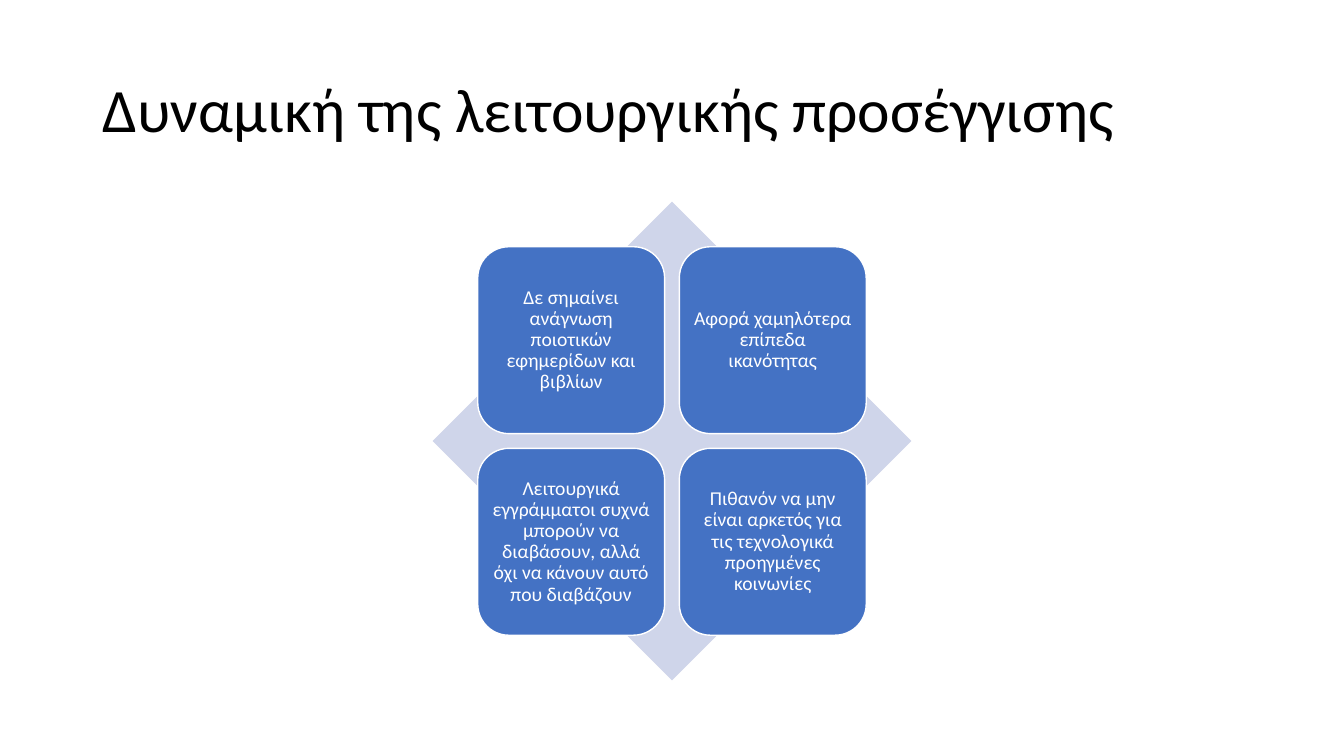
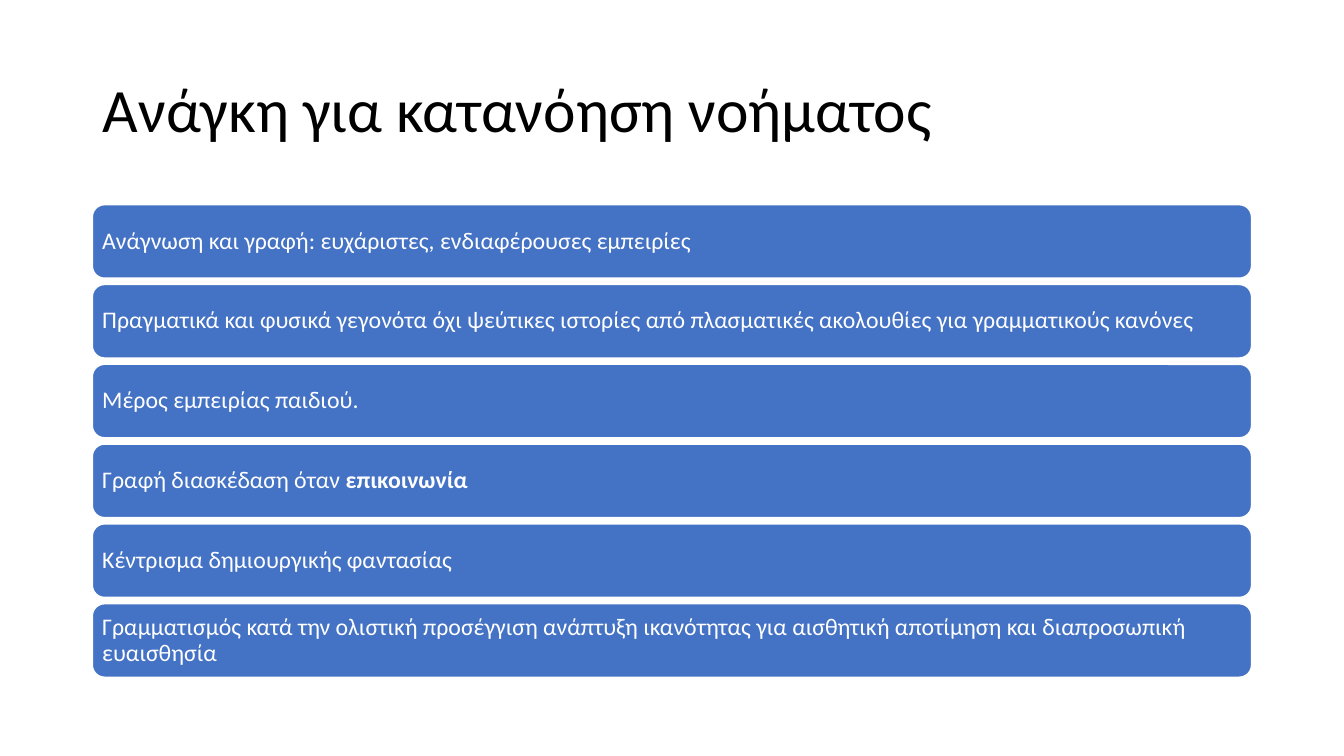
"""Build two slides on functional literacy: a four-box diamond and a stack of bars."""
from dataclasses import dataclass

from pptx import Presentation
from pptx.dml.color import RGBColor
from pptx.enum.shapes import MSO_SHAPE
from pptx.enum.text import MSO_ANCHOR, PP_ALIGN
from pptx.shapes.autoshape import Shape
from pptx.slide import Slide
from pptx.util import Emu, Pt


@dataclass(frozen=True)
class Theme:
    """Colours, font and type sizes that both slides share."""
    font: str = "Calibri"
    ink: RGBColor = RGBColor(0x00, 0x00, 0x00)
    white: RGBColor = RGBColor(0xFF, 0xFF, 0xFF)
    blue: RGBColor = RGBColor(0x44, 0x72, 0xC4)
    pale: RGBColor = RGBColor(0xCF, 0xD5, 0xEA)
    head: int = 44
    bar: int = 17
    card: int = 14
    edge: int = 1
    lead: float = 0.9


@dataclass(frozen=True)
class Rect:
    """A place on the slide in px."""
    left: int
    top: int
    width: int
    height: int

    def emu(self) -> tuple[Emu, Emu, Emu, Emu]:
        """Return the four lengths in EMU."""
        return px(self.left), px(self.top), px(self.width), px(self.height)


@dataclass(frozen=True)
class Style:
    """How the text of one kind of element is set."""
    size: int
    color: RGBColor
    align: PP_ALIGN
    side: int
    rim: int


@dataclass(frozen=True)
class Label:
    """A text with an optional bold ending."""
    text: str
    bold: str = ""


THEME = Theme()
SCALE = 9525
PAGE = Rect(0, 0, 1280, 720)
TITLE = Rect(88, 38, 1104, 139)
HEAD = Style(THEME.head, THEME.ink, PP_ALIGN.LEFT, 10, 5)
CARD = Style(THEME.card, THEME.white, PP_ALIGN.CENTER, 5, 5)
BAR = Style(THEME.bar, THEME.white, PP_ALIGN.LEFT, 6, 6)

DIAMOND = Rect(412, 192, 456, 456)
CARD_SIZE, CARD_STEP = 178, 192
FIRST_BAR = Rect(88, 195, 1104, 70)
BAR_STEP = 76

CARDS = (
    Label("Δε σημαίνει ανάγνωση ποιοτικών εφημερίδων και βιβλίων"),
    Label("Αφορά χαμηλότερα επίπεδα ικανότητας"),
    Label("Λειτουργικά εγγράμματοι συχνά μπορούν να διαβάσουν, "
          "αλλά όχι να κάνουν αυτό που διαβάζουν"),
    Label("Πιθανόν να μην είναι αρκετός για τις τεχνολογικά προηγμένες κοινωνίες"),
)
BARS = (
    Label("Ανάγνωση και γραφή: ευχάριστες, ενδιαφέρουσες εμπειρίες"),
    Label("Πραγματικά και φυσικά γεγονότα όχι ψεύτικες ιστορίες "
          "από πλασματικές ακολουθίες για γραμματικούς κανόνες"),
    Label("Μέρος εμπειρίας παιδιού."),
    Label("Γραφή διασκέδαση όταν ", "επικοινωνία"),
    Label("Κέντρισμα δημιουργικής φαντασίας"),
    Label("Γραμματισμός κατά την ολιστική προσέγγιση ανάπτυξη ικανότητας "
          "για αισθητική αποτίμηση και διαπροσωπική ευαισθησία"),
)


def px(count: int) -> Emu:
    """Turn px into EMU."""
    return Emu(count * SCALE)


def write(shape: Shape, label: Label, style: Style) -> None:
    """Put a styled label into a shape."""
    frame = shape.text_frame
    frame.word_wrap = True
    frame.vertical_anchor = MSO_ANCHOR.MIDDLE
    frame.margin_left = frame.margin_right = px(style.side)
    frame.margin_top = frame.margin_bottom = px(style.rim)
    frame.text = label.text
    para = frame.paragraphs[0]
    para.alignment = style.align
    para.line_spacing = THEME.lead
    if label.bold:
        strong = para.add_run()
        strong.text = label.bold
        strong.font.bold = True
    for run in para.runs:
        run.font.name = THEME.font
        run.font.size = Pt(style.size)
        run.font.color.rgb = style.color


def add_form(slide: Slide, kind: MSO_SHAPE, rect: Rect, fill: RGBColor) -> Shape:
    """Draw a flat shape without a line."""
    shape = slide.shapes.add_shape(kind, *rect.emu())
    shape.shadow.inherit = False
    shape.fill.solid()
    shape.fill.fore_color.rgb = fill
    shape.line.fill.background()
    return shape


def add_box(slide: Slide, rect: Rect, label: Label, style: Style) -> None:
    """Draw a blue rounded box with a white edge and its label."""
    box = add_form(slide, MSO_SHAPE.ROUNDED_RECTANGLE, rect, THEME.blue)
    box.line.color.rgb = THEME.white
    box.line.width = Pt(THEME.edge)
    write(box, label, style)


def add_page(deck: Presentation, title: str) -> Slide:
    """Add a blank slide with its title."""
    slide = deck.slides.add_slide(deck.slide_layouts[6])
    write(slide.shapes.add_textbox(*TITLE.emu()), Label(title), HEAD)
    return slide


def draw_cards(slide: Slide) -> None:
    """Draw the diamond and a two by two grid centred on it."""
    add_form(slide, MSO_SHAPE.DIAMOND, DIAMOND, THEME.pale)
    inset = (DIAMOND.width - CARD_STEP - CARD_SIZE) // 2
    for index, label in enumerate(CARDS):
        row, col = divmod(index, 2)
        rect = Rect(DIAMOND.left + inset + col * CARD_STEP,
                    DIAMOND.top + inset + row * CARD_STEP,
                    CARD_SIZE, CARD_SIZE)
        add_box(slide, rect, label, CARD)


def draw_bars(slide: Slide) -> None:
    """Draw the bars at equal steps down the slide."""
    for index, label in enumerate(BARS):
        rect = Rect(FIRST_BAR.left, FIRST_BAR.top + index * BAR_STEP,
                    FIRST_BAR.width, FIRST_BAR.height)
        add_box(slide, rect, label, BAR)


def main() -> None:
    """Build and save the deck."""
    deck = Presentation()
    deck.slide_width, deck.slide_height = px(PAGE.width), px(PAGE.height)
    draw_cards(add_page(deck, "Δυναμική της λειτουργικής προσέγγισης"))
    draw_bars(add_page(deck, "Ανάγκη για κατανόηση νοήματος"))
    deck.save("out.pptx")


if __name__ == "__main__":
    main()
